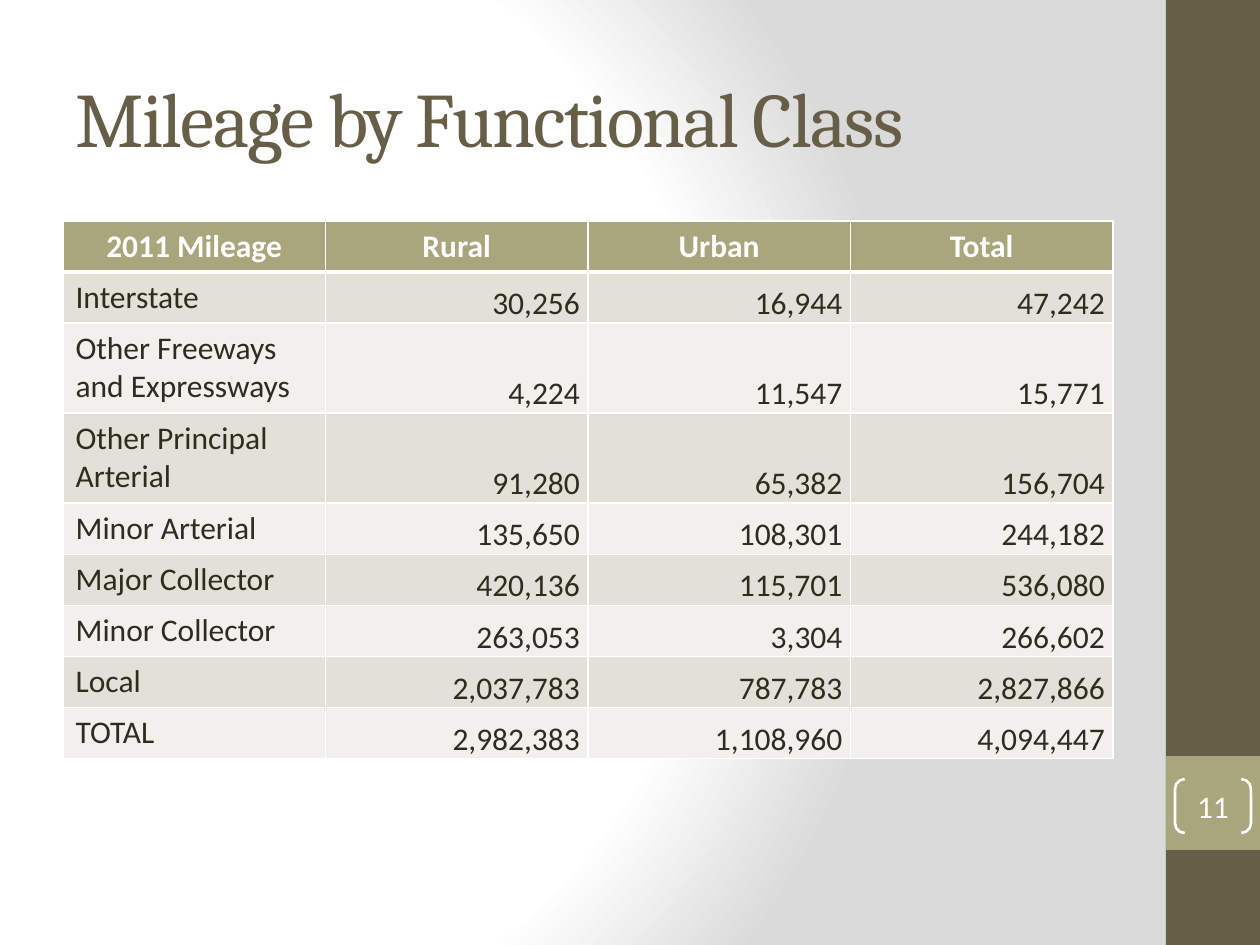
import pptx
import pptx.util
import pptx.oxml
import pptx.oxml.ns
from pptx.dml.color import RGBColor
from pptx.enum.shapes import MSO_SHAPE
from pptx.enum.text import MSO_ANCHOR, PP_ALIGN

TITLE = "Mileage by Functional Class"
PAGE = "11"
HEADER = ["2011 Mileage", "Rural", "Urban", "Total"]
ROWS = [
    ("Interstate", "30,256", "16,944", "47,242"),
    ("Other Freeways and Expressways", "4,224", "11,547", "15,771"),
    ("Other Principal Arterial", "91,280", "65,382", "156,704"),
    ("Minor Arterial", "135,650", "108,301", "244,182"),
    ("Major Collector", "420,136", "115,701", "536,080"),
    ("Minor Collector", "263,053", "3,304", "266,602"),
    ("Local", "2,037,783", "787,783", "2,827,866"),
    ("TOTAL", "2,982,383", "1,108,960", "4,094,447"),
]
COLORS = {
    "brown": "675E47", "olive": "A9A57C", "band": "E2E1D7", "light": "F1F0EC",
    "text": "2F2B20", "white": "FFFFFF", "gray": "DADADA",
}
STOPS = [(0, "white"), (75, "white"), (100, "gray")]
SLIDE_W, SLIDE_H = 1260, 945
BAR_X, BAR_W = 1166, 94
LEFT, CONTENT_W = 63, 1050
TABLE_Y, LINE_ROW, WRAPPED_ROW = 221, 51, 90
WRAP_CHARS = 18


def px(n):
    return pptx.util.Emu(round(n * 914400 / 126))


def rgb(name):
    return RGBColor.from_string(COLORS[name])


def write(tf, text, size=18, font="Calibri", color="text", bold=False,
          align=PP_ALIGN.LEFT, spacing=None):
    p = tf.paragraphs[0]
    p.alignment = align
    r = p.add_run()
    r.text = text
    r.font.size = pptx.util.Pt(size)
    r.font.name = font
    r.font.bold = bold
    r.font.color.rgb = rgb(color)
    if spacing is not None:
        r.font._element.set("spc", str(spacing * 100))


def add_shape(s, kind, x, y, w, h, fill=None):
    sp = s.shapes.add_shape(kind, px(x), px(y), px(w), px(h))
    sp.shadow.inherit = False
    sp.line.fill.background()
    if fill:
        sp.fill.solid()
        sp.fill.fore_color.rgb = rgb(fill)
    else:
        sp.fill.background()
    return sp


def set_background(s):
    """Fill the slide with a circular gradient."""
    s.background.fill.solid()
    bg_pr = s.background._cSld.bg.bgPr
    stops = "".join(f'<a:gs pos="{pos * 1000}"><a:srgbClr val="{COLORS[c]}"/></a:gs>'
                    for pos, c in STOPS)
    grad = pptx.oxml.parse_xml(
        f'<a:gradFill {pptx.oxml.ns.nsdecls("a")} rotWithShape="1"><a:gsLst>{stops}</a:gsLst>'
        '<a:path path="circle"><a:fillToRect l="20000" t="50000" r="100000" b="50000"/>'
        '</a:path></a:gradFill>')
    bg_pr.replace(bg_pr[0], grad)


def set_borders(cell, bottom=1, top=1):
    """Draw white cell borders, widths in points."""
    widths = {"lnL": 1, "lnR": 1, "lnT": top, "lnB": bottom}
    tc_pr = cell._tc.get_or_add_tcPr()
    for i, (tag, width) in enumerate(widths.items()):
        tc_pr.insert(i, pptx.oxml.parse_xml(
            f'<a:{tag} {pptx.oxml.ns.nsdecls("a")} w="{width * 12700}"><a:solidFill>'
            f'<a:srgbClr val="{COLORS["white"]}"/></a:solidFill></a:{tag}>'))


def add_mileage_table(s):
    heights = [LINE_ROW] + [WRAPPED_ROW if len(row[0]) > WRAP_CHARS else LINE_ROW
                            for row in ROWS]
    table = s.shapes.add_table(len(heights), len(HEADER), px(LEFT), px(TABLE_Y),
                               px(CONTENT_W), px(sum(heights))).table
    for i, values in enumerate([HEADER] + ROWS):
        table.rows[i].height = px(heights[i])
        for j, text in enumerate(values):
            cell = table.cell(i, j)
            cell.fill.solid()
            if i == 0:
                fill = "olive"
                write(cell.text_frame, text, color="white", bold=True, align=PP_ALIGN.CENTER)
            else:
                fill = "band" if i % 2 else "light"
                write(cell.text_frame, text, align=PP_ALIGN.RIGHT if j else PP_ALIGN.LEFT)
                if j:
                    cell.vertical_anchor = MSO_ANCHOR.BOTTOM
                    cell.margin_left = cell.margin_top = px(1)
                    cell.margin_right, cell.margin_bottom = px(8), 0
            cell.fill.fore_color.rgb = rgb(fill)
            set_borders(cell, bottom=3 if i == 0 else 1, top=3 if i == 1 else 1)


def main():
    prs = pptx.Presentation()
    prs.slide_width, prs.slide_height = px(SLIDE_W), px(SLIDE_H)
    s = prs.slides.add_slide(prs.slide_layouts[5])
    set_background(s)
    add_shape(s, MSO_SHAPE.RECTANGLE, BAR_X, 0, BAR_W, SLIDE_H, "brown")
    add_shape(s, MSO_SHAPE.RECTANGLE, BAR_X, 756, BAR_W, BAR_W, "olive")

    title = s.shapes.title
    title.left, title.top, title.width, title.height = map(px, (LEFT, 38, CONTENT_W, 157))
    title.text_frame.vertical_anchor = MSO_ANCHOR.MIDDLE
    write(title.text_frame, TITLE, size=44, font="Cambria", color="brown", spacing=-1)

    add_mileage_table(s)

    page = add_shape(s, MSO_SHAPE.DOUBLE_BRACKET, 1175, 779, 76, 54)
    page.adjustments[0] = 0.18
    page.line.color.rgb = rgb("white")
    page.line.width = pptx.util.Pt(1.5)
    tf = page.text_frame
    tf.margin_left = tf.margin_right = tf.margin_top = tf.margin_bottom = 0
    tf.vertical_anchor = MSO_ANCHOR.MIDDLE
    write(tf, PAGE, color="white", align=PP_ALIGN.CENTER)

    prs.save("out.pptx")


if __name__ == "__main__":
    main()
